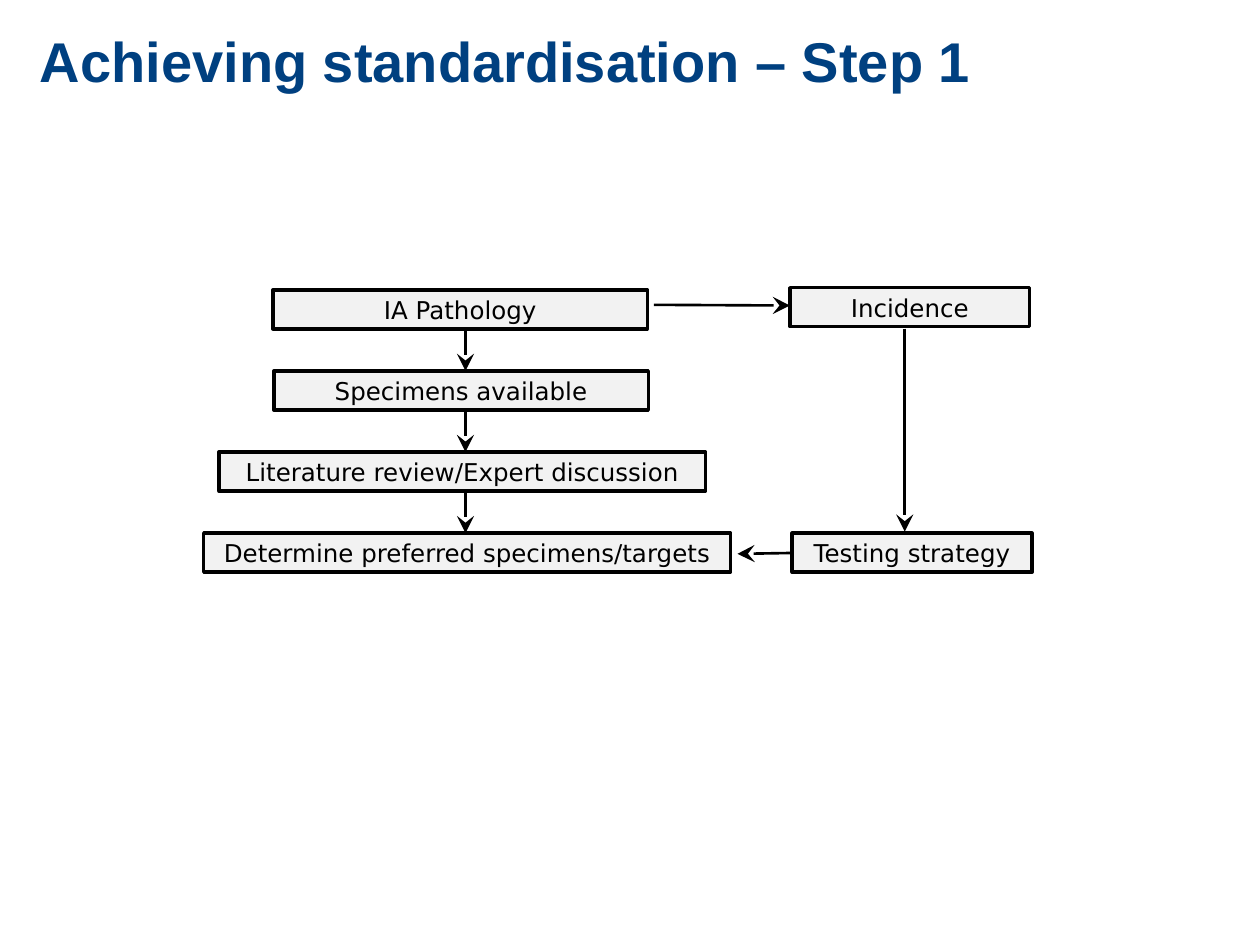
from dataclasses import dataclass

from lxml.etree import SubElement
from pptx import Presentation
from pptx.dml.color import RGBColor
from pptx.enum.shapes import MSO_CONNECTOR as Connector, MSO_SHAPE as Preset
from pptx.enum.text import MSO_ANCHOR as Anchor, PP_ALIGN as Align
from pptx.oxml.ns import qn
from pptx.slide import Slide
from pptx.util import Pt


@dataclass(frozen=True)
class Theme:
    title_color: RGBColor = RGBColor(0x00, 0x40, 0x80)
    ink: RGBColor = RGBColor(0x00, 0x00, 0x00)
    box_fill: RGBColor = RGBColor(0xF2, 0xF2, 0xF2)
    title_font: str = "Arial"
    box_font: str = "DejaVu Sans"
    title_size: float = 32
    box_size: float = 14
    border: float = 2
    arrow_width: float = 1.5


@dataclass(frozen=True)
class Step:
    text: str
    left: float
    top: float
    width: float


@dataclass(frozen=True)
class Arrow:
    start: tuple[float, float]
    end: tuple[float, float]


THEME = Theme()
BOX_HEIGHT = 22.3
ROWS = [165.6 + 46.35 * row for row in range(4)]

STEPS = [
    Step("IA Pathology", 156, ROWS[0], 214),
    Step("Specimens available", 156.5, ROWS[1], 214),
    Step("Literature review/Expert discussion", 125.2, ROWS[2], 278),
    Step("Determine preferred specimens/targets", 116.4, ROWS[3], 301),
    Step("Incidence", 451.4, 164.4, 137),
    Step("Testing strategy", 452.7, ROWS[3], 137),
]
MAIN_X = 266
INCIDENCE_X = 517
ARROWS = [
    *(Arrow((MAIN_X, upper + BOX_HEIGHT), (MAIN_X, lower))
      for upper, lower in zip(ROWS, ROWS[1:])),
    Arrow((373.7, 174.2), (451.4, 174.6)),
    Arrow((INCIDENCE_X, 187.8), (INCIDENCE_X, 303.8)),
    Arrow((452.7, 316), (421.4, 316.5)),
]


def draw_title(page: Slide, text: str) -> None:
    box = page.shapes.add_textbox(Pt(18), Pt(11.5), Pt(542), Pt(42.5))
    frame = box.text_frame
    frame.word_wrap = True
    frame.margin_left = frame.margin_right = frame.margin_bottom = Pt(0)
    frame.margin_top = Pt(3.6)
    para = frame.paragraphs[0]
    para.text = text
    para.alignment = Align.CENTER
    para.font.name = THEME.title_font
    para.font.size = Pt(THEME.title_size)
    para.font.bold = True
    para.font.color.rgb = THEME.title_color


def draw_step(page: Slide, step: Step) -> None:
    box = page.shapes.add_shape(Preset.RECTANGLE, Pt(step.left), Pt(step.top),
                                Pt(step.width), Pt(BOX_HEIGHT))
    box.shadow.inherit = False
    box.fill.solid()
    box.fill.fore_color.rgb = THEME.box_fill
    box.line.color.rgb = THEME.ink
    box.line.width = Pt(THEME.border)
    frame = box.text_frame
    frame.word_wrap = False
    frame.vertical_anchor = Anchor.MIDDLE
    frame.margin_left = frame.margin_right = Pt(10.8)
    frame.margin_top = frame.margin_bottom = Pt(7.2)
    para = frame.paragraphs[0]
    para.text = step.text
    para.alignment = Align.CENTER
    para.font.name = THEME.box_font
    para.font.size = Pt(THEME.box_size)
    para.font.color.rgb = THEME.ink


def draw_arrow(page: Slide, arrow: Arrow) -> None:
    """Draw a straight line with a large stealth head at its end."""
    line = page.shapes.add_connector(Connector.STRAIGHT,
                                     *map(Pt, arrow.start + arrow.end))
    line.line.color.rgb = THEME.ink
    line.line.width = Pt(THEME.arrow_width)
    SubElement(line.line._get_or_add_ln(), qn("a:tailEnd"),
               type="stealth", w="lg", len="lg")
    SubElement(line._element.spPr, qn("a:effectLst"))


def main() -> None:
    deck = Presentation()
    deck.slide_width, deck.slide_height = Pt(720), Pt(540)
    page = deck.slides.add_slide(deck.slide_layouts[6])
    draw_title(page, "Achieving standardisation – Step 1")
    for step in STEPS:
        draw_step(page, step)
    for arrow in ARROWS:
        draw_arrow(page, arrow)
    deck.save("out.pptx")


if __name__ == "__main__":
    main()
